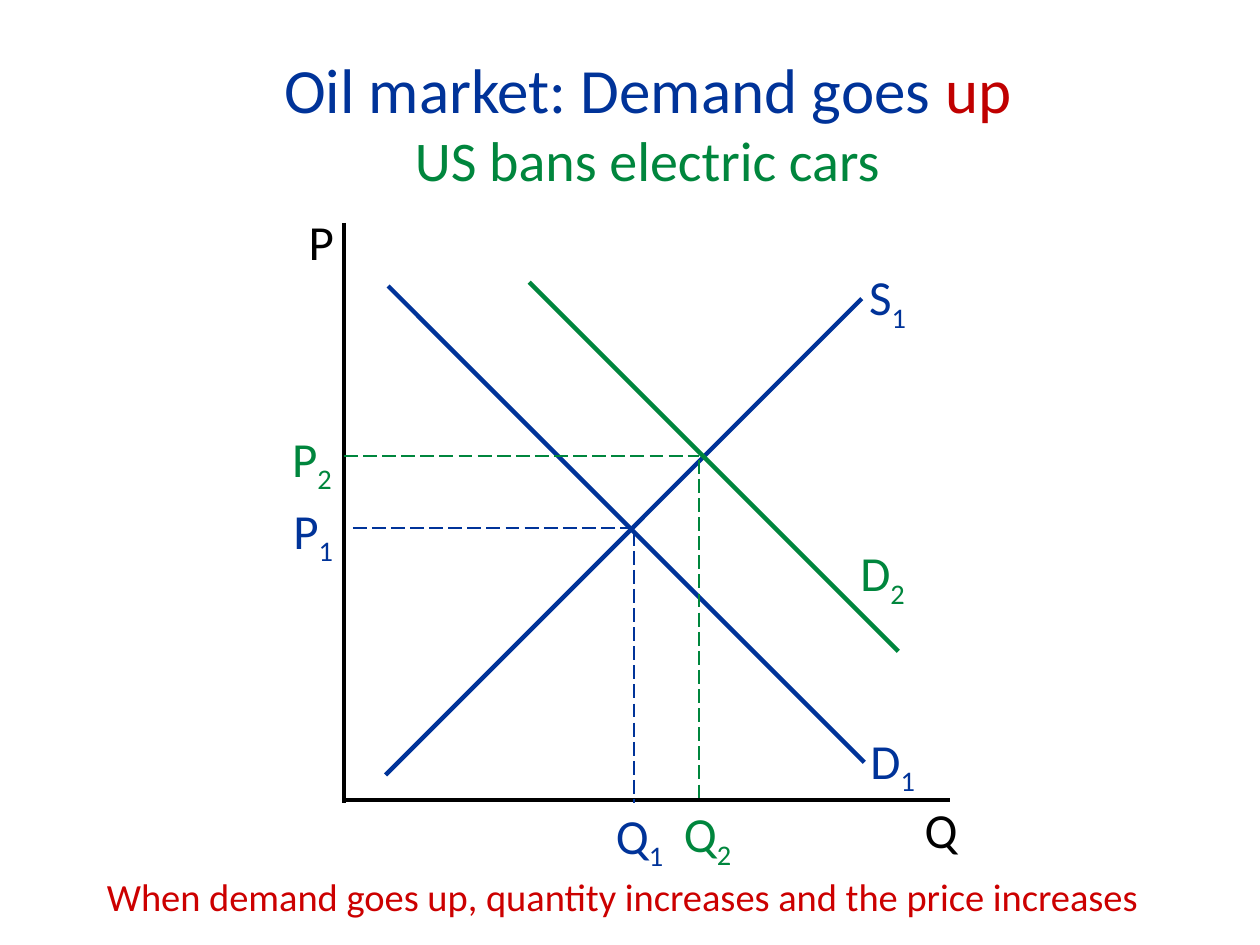
import pptx
import pptx.util
from pptx.dml.color import RGBColor
from pptx.enum.dml import MSO_LINE
from pptx.enum.shapes import MSO_CONNECTOR
from pptx.enum.text import MSO_ANCHOR, MSO_AUTO_SIZE, PP_ALIGN
from pptx.oxml.ns import qn
from pptx.util import Inches, Pt
from lxml import etree

FONT = "Calibri"
BLUE, GREEN, BLACK = "003399", "00863D", "000000"

# Content: title paragraphs as (size, [(text, colour)])
TITLE = [
    (36, [("Oil market: Demand goes ", BLUE), ("up", "C00000")]),
    (32, [("US bans electric cars", GREEN)]),
]
CAPTION = "When demand goes up, quantity increases and the price increases"

# Lines: start, end, colour
SOLID_LINES = [
    ((2.73, 1.77), (2.73, 6.37), BLACK),  # price axis
    ((2.74, 6.35), (7.54, 6.35), BLACK),  # quantity axis
    ((3.06, 6.15), (6.84, 2.37), BLUE),   # supply
    ((3.08, 2.27), (6.86, 6.05), BLUE),   # first demand
    ((4.2, 2.24), (7.13, 5.17), GREEN),   # second demand
]
GUIDE_LINES = [
    ((2.8, 4.19), (5, 4.19), BLUE),
    ((5.03, 4.22), (5.03, 6.37), BLUE),
    ((2.73, 3.62), (5.55, 3.62), GREEN),
    ((5.55, 3.65), (5.55, 6.35), GREEN),
]

# Labels: letter, subscript, colour, (left, top, width, height), line spacing
LABELS = [
    ("P", "", BLACK, (2.35, 1.72, 0.45, 0.49), 0.8),
    ("Q", "", BLACK, (7.24, 6.3, 0.51, 0.57), 1),
    ("S", "1", BLUE, (6.8, 2.07, 0.58, 0.57), 1),
    ("D", "1", BLUE, (6.81, 5.75, 0.58, 0.57), 1),
    ("D", "2", GREEN, (6.73, 4.26, 0.58, 0.57), 1),
    ("P", "1", BLUE, (2.23, 3.97, 0.58, 0.49), 0.8),
    ("P", "2", GREEN, (2.22, 3.4, 0.58, 0.49), 0.8),
    ("Q", "1", BLUE, (4.79, 6.39, 0.75, 0.48), 0.8),
    ("Q", "2", GREEN, (5.33, 6.38, 0.75, 0.49), 0.8),
]


def set_font(font, size, colour):
    font.name = FONT
    font.size = Pt(size)
    font.color.rgb = RGBColor.from_string(colour)


def add_line(shapes, start, end, colour, width, dash=None):
    ends = [Inches(value) for value in start + end]
    line = shapes.add_connector(MSO_CONNECTOR.STRAIGHT, *ends)
    line.line.color.rgb = RGBColor.from_string(colour)
    line.line.width = Pt(width)
    if dash:
        line.line.dash_style = dash
    etree.SubElement(line._element.spPr, qn("a:effectLst"))


def add_text(shapes, box, text, size, colour, subscript="", spacing=1):
    shape = shapes.add_textbox(*[Inches(value) for value in box])
    shape.text_frame.word_wrap = True
    paragraph = shape.text_frame.paragraphs[0]
    paragraph.line_spacing = spacing
    set_font(paragraph.font, size, colour)
    paragraph.add_run().text = text
    if subscript:
        run = paragraph.add_run()
        run.text = subscript
        run.font._element.set("baseline", "-25000")


presentation = pptx.Presentation()
presentation.slide_width, presentation.slide_height = Inches(10), Inches(7.5)
slide = presentation.slides.add_slide(presentation.slide_layouts[5])

# Title
title = slide.shapes.title
title.left, title.top, title.width, title.height = map(Inches, (0.7, 0.34, 8.88, 1.25))
frame = title.text_frame
frame.auto_size = MSO_AUTO_SIZE.NONE
frame.vertical_anchor = MSO_ANCHOR.MIDDLE
for index, (size, runs) in enumerate(TITLE):
    paragraph = frame.add_paragraph() if index else frame.paragraphs[0]
    paragraph.alignment = PP_ALIGN.CENTER
    for text, colour in runs:
        run = paragraph.add_run()
        run.text = text
        set_font(run.font, size, colour)

# Supply and demand diagram
diagram = slide.shapes.add_group_shape().shapes
for start, end, colour in SOLID_LINES:
    add_line(diagram, start, end, colour, 2.5)
for start, end, colour in GUIDE_LINES:
    add_line(diagram, start, end, colour, 1, MSO_LINE.LONG_DASH)
for letter, subscript, colour, box, spacing in LABELS:
    add_text(diagram, box, letter, 28, colour, subscript, spacing)

# Conclusion
add_text(slide.shapes, (0.75, 6.88, 9.04, 0.47), CAPTION, 22, "CC0000")

presentation.save("out.pptx")
